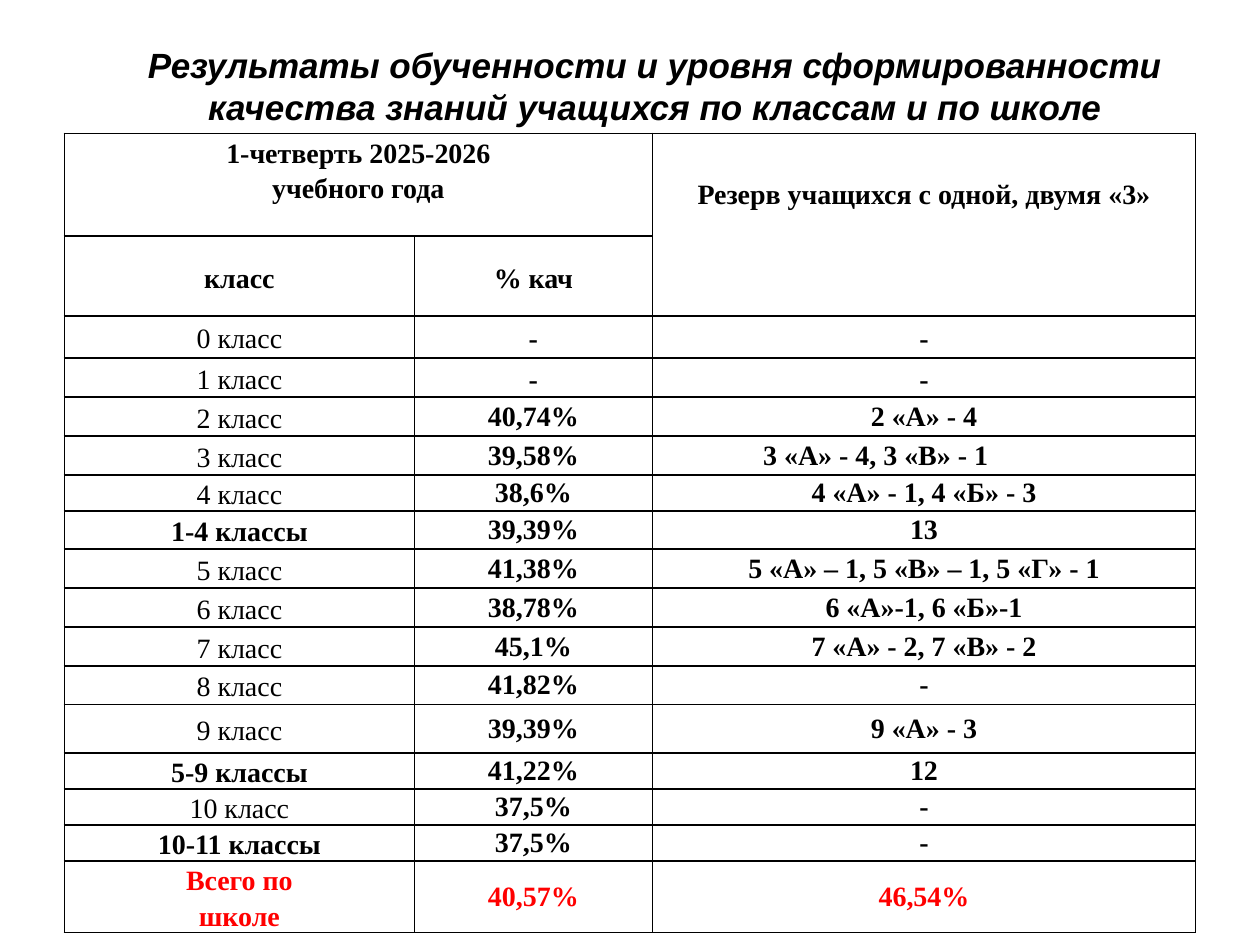
from lxml.etree import SubElement
from pptx import Presentation
from pptx.dml.color import RGBColor
from pptx.enum.text import MSO_ANCHOR, PP_ALIGN
from pptx.oxml.ns import qn
from pptx.util import Pt

TITLE = ("Результаты обученности и уровня сформированности "
         "качества знаний учащихся по классам и по школе")
PERIOD = "1-четверть 2025-2026\nучебного года"
RESERVE = "Резерв учащихся с одной, двумя «3»"
COLUMN_HEADS = ("класс", "% кач")
# Class, quality, reserve, row height
RESULTS = [
    ("0 класс", "-", "-", 24),
    ("1 класс", "-", "-", 22.3),
    ("2 класс", "40,74%", "2 «А» - 4", 22.3),
    ("3 класс", "39,58%", "3 «А» - 4, 3 «В» - 1", 22.3),
    ("4 класс", "38,6%", "4 «А» - 1, 4 «Б» - 3", 20.5),
    ("1-4 классы", "39,39%", "13", 21.8),
    ("5 класс", "41,38%", "5 «А» – 1, 5 «В» – 1, 5 «Г» - 1", 22.3),
    ("6 класс", "38,78%", "6 «А»-1, 6 «Б»-1", 22.3),
    ("7 класс", "45,1%", "7 «А» - 2, 7 «В» - 2", 22.3),
    ("8 класс", "41,82%", "-", 21.8),
    ("9 класс", "39,39%", "9 «А» - 3", 28),
    ("5-9 классы", "41,22%", "12", 20.5),
    ("10 класс", "37,5%", "-", 20.5),
    ("10-11 классы", "37,5%", "-", 20.5),
    ("Всего по\nшколе", "40,57%", "46,54%", 40.6),
]
HEAD_HEIGHTS = (58.8, 45.7)
COLUMN_WIDTHS = (200, 136, 310.5)
TABLE_LEFT, TABLE_TOP = 36.8, 76.2
WIDE_MARGIN, NARROW_MARGIN = 5, 0.7
SHIFTED_ROW, SHIFT = "3 класс", 56

THEME = {
    "title_font": "Arial", "title_size": Pt(20),
    "table_font": "Times New Roman", "table_size": Pt(16),
    "text": RGBColor(0, 0, 0), "total": RGBColor(255, 0, 0),
    "border": "000000", "border_width": Pt(1),
}


def add_borders(cell):
    properties = cell._tc.get_or_add_tcPr()
    for side in ("a:lnL", "a:lnR", "a:lnT", "a:lnB"):
        line = SubElement(properties, qn(side), w=str(THEME["border_width"]))
        fill = SubElement(line, qn("a:solidFill"))
        SubElement(fill, qn("a:srgbClr"), val=THEME["border"])


def fill_cell(cell, text, bold=True, color=THEME["text"], spacing=1.15,
              margin=WIDE_MARGIN, anchor=MSO_ANCHOR.MIDDLE):
    cell.margin_left = cell.margin_right = Pt(margin)
    cell.margin_top = cell.margin_bottom = Pt(0)
    cell.vertical_anchor = anchor
    cell.text_frame.text = text
    for para in cell.text_frame.paragraphs:
        para.alignment = PP_ALIGN.CENTER
        para.line_spacing = spacing
        font = para.runs[0].font
        font.name, font.size = THEME["table_font"], THEME["table_size"]
        font.bold = bold
        font.color.rgb = color


deck = Presentation()
deck.slide_width, deck.slide_height = Pt(720), Pt(540)
slide = deck.slides.add_slide(deck.slide_layouts[5])

# Title
title = slide.shapes.title
title.left, title.top, title.width, title.height = Pt(48), Pt(21), Pt(652.5), Pt(55.7)
title.text_frame.text = TITLE
title.text_frame.word_wrap = True
title.text_frame.vertical_anchor = MSO_ANCHOR.TOP
para = title.text_frame.paragraphs[0]
para.alignment = PP_ALIGN.CENTER
font = para.runs[0].font
font.name, font.size = THEME["title_font"], THEME["title_size"]
font.bold = font.italic = True
font.color.rgb = THEME["text"]

# Table grid
heights = [*HEAD_HEIGHTS, *(row[-1] for row in RESULTS)]
table = slide.shapes.add_table(
    len(heights), len(COLUMN_WIDTHS), Pt(TABLE_LEFT), Pt(TABLE_TOP),
    Pt(sum(COLUMN_WIDTHS)), Pt(sum(heights))).table
table.first_row = table.horz_banding = False
for column, width in zip(table.columns, COLUMN_WIDTHS):
    column.width = Pt(width)
for row, height in zip(table.rows, heights):
    row.height = Pt(height)
for cell in table.iter_cells():
    add_borders(cell)
    cell.fill.background()

# Header rows
table.cell(0, 0).merge(table.cell(0, 1))
table.cell(0, 2).merge(table.cell(1, 2))
fill_cell(table.cell(0, 0), PERIOD, anchor=MSO_ANCHOR.TOP)
fill_cell(table.cell(0, 2), RESERVE, anchor=MSO_ANCHOR.TOP)
table.cell(0, 2).margin_top = Pt(23.6)
for column, head in enumerate(COLUMN_HEADS):
    fill_cell(table.cell(1, column), head)

# Results: single classes are regular, group and total rows are bold
for index, (name, quality, reserve, _) in enumerate(RESULTS):
    row = index + len(HEAD_HEIGHTS)
    is_total = index == len(RESULTS) - 1
    color = THEME["total"] if is_total else THEME["text"]
    fill_cell(table.cell(row, 0), name, not name.endswith("класс"), color,
              anchor=MSO_ANCHOR.TOP if is_total else MSO_ANCHOR.MIDDLE)
    spacing = 1.15 if index < 2 else 1.0
    margin = WIDE_MARGIN if index < 3 else NARROW_MARGIN
    for column, value in enumerate((quality, reserve), start=1):
        fill_cell(table.cell(row, column), value, color=color,
                  spacing=spacing, margin=margin)
    if name == SHIFTED_ROW:
        table.cell(row, 2).margin_right = Pt(SHIFT)

deck.save("out.pptx")
